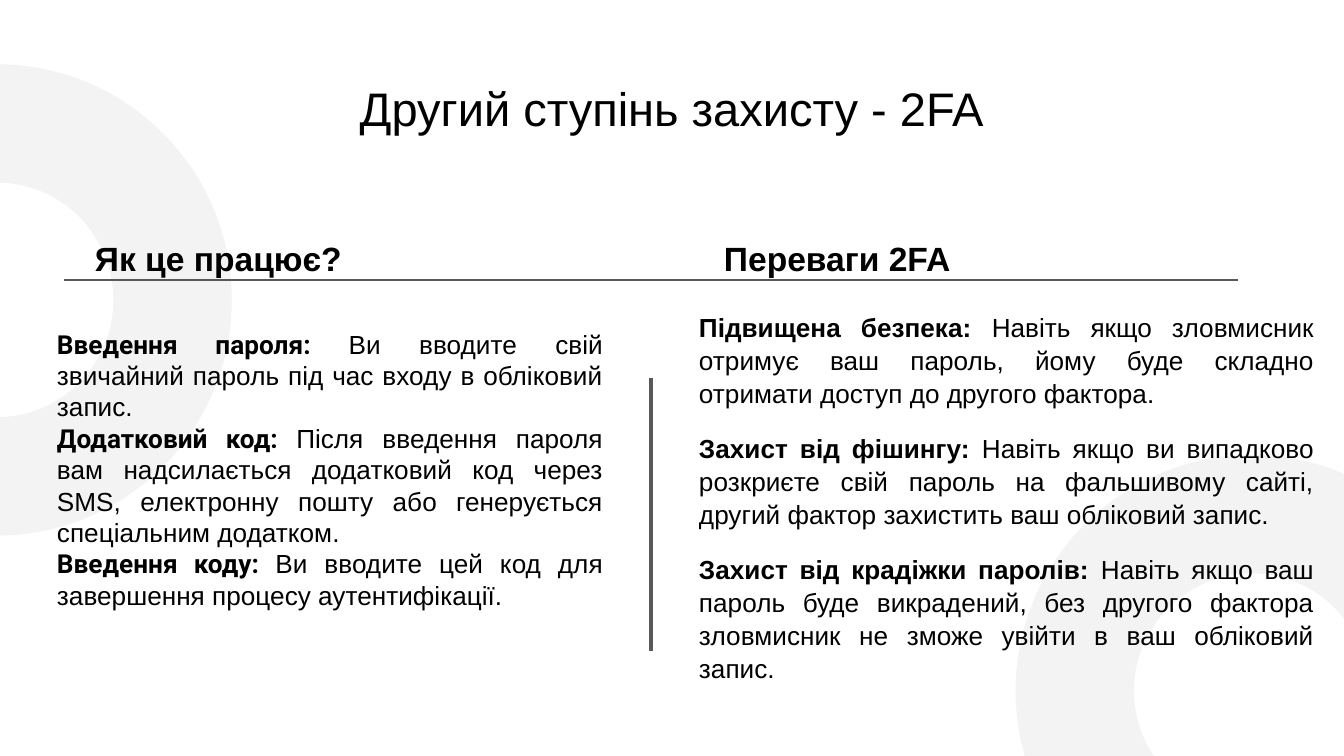
import pptx
import pptx.util
import pptx.dml.color
import pptx.enum.shapes
import pptx.enum.text
import pptx.oxml

PX = 914400 / 134.4
INSET = 13
ALIGN = pptx.enum.text.PP_ALIGN
ANCHOR = pptx.enum.text.MSO_ANCHOR

STEPS = [
    ("Введення пароля: ", "Ви вводите свій звичайний пароль під час входу в обліковий запис."),
    ("Додатковий код: ", "Після введення пароля вам надсилається додатковий код через SMS, "
     "електронну пошту або генерується спеціальним додатком."),
    ("Введення коду: ", "Ви вводите цей код для завершення процесу аутентифікації."),
]
BENEFITS = [
    ("Підвищена безпека: ", "Навіть якщо зловмисник отримує ваш пароль, йому буде складно "
     "отримати доступ до другого фактора."),
    ("Захист від фішингу: ", "Навіть якщо ви випадково розкриєте свій пароль на фальшивому "
     "сайті, другий фактор захистить ваш обліковий запис."),
    ("Захист від крадіжки паролів:", " Навіть якщо ваш пароль буде викрадений, без другого "
     "фактора зловмисник не зможе увійти в ваш обліковий запис."),
]


def px(length):
    return pptx.util.Emu(round(length * PX))


def color(value):
    return pptx.dml.color.RGBColor.from_string(value)


def add_span(para, text, size, bold=False, font="Arial"):
    span = para.add_run()
    span.text = text
    span.font.size = pptx.util.Pt(size)
    span.font.bold = bold
    span.font.name = font
    span.font.color.rgb = color("000000")


def prepare_frame(shape, anchor):
    frame = shape.text_frame
    frame.word_wrap = True
    frame.auto_size = pptx.enum.text.MSO_AUTO_SIZE.NONE
    frame.vertical_anchor = anchor
    frame.margin_left = frame.margin_right = px(INSET)
    frame.margin_top = frame.margin_bottom = px(INSET)
    return frame


def add_text_box(page, box, anchor):
    return prepare_frame(page.shapes.add_textbox(*map(px, box)), anchor)


def add_ring(page, box, rotation):
    ring = page.shapes.add_shape(
        pptx.enum.shapes.MSO_SHAPE.BLOCK_ARC, *map(px, box))
    ring.adjustments[0] = 108
    ring.adjustments[1] = 0
    ring.adjustments[2] = 0.25
    ring.rotation = rotation
    ring.shadow.inherit = False
    ring.fill.solid()
    ring.fill.fore_color.rgb = color("F3F3F3")
    ring.line.color.rgb = color("F3F3F3")
    ring.line.width = pptx.util.Pt(0.75)


def add_title(page, box, text):
    title = page.shapes.title
    title.left, title.top, title.width, title.height = map(px, box)
    para = prepare_frame(title, ANCHOR.MIDDLE).paragraphs[0]
    para.alignment = ALIGN.CENTER
    add_span(para, text, 25.2)


def add_heading(page, box, text):
    para = add_text_box(page, box, ANCHOR.MIDDLE).paragraphs[0]
    para.line_spacing = 1.15
    add_span(para, text, 18, bold=True)


def add_points(page, box, points, label_font, line_spacing, gap):
    frame = add_text_box(page, box, ANCHOR.TOP)
    for index, (label, detail) in enumerate(points):
        para = frame.add_paragraph() if index else frame.paragraphs[0]
        para.alignment = ALIGN.JUSTIFY
        para.line_spacing = line_spacing
        para.space_before = pptx.util.Pt(gap if index else 0)
        add_span(para, label, 14, bold=True, font=label_font)
        add_span(para, detail, 14)


def add_rule(page, start, end, width):
    rule = page.shapes.add_connector(
        pptx.enum.shapes.MSO_CONNECTOR.STRAIGHT, *map(px, start + end))
    rule.line.color.rgb = color("595959")
    rule.line.width = pptx.util.Pt(width)
    properties = rule._element.spPr
    properties.append(pptx.oxml.parse_xml(
        '<a:effectLst xmlns:a="http://schemas.openxmlformats.org/drawingml/2006/main"/>'))


def build_page(deck):
    page = deck.slides.add_slide(deck.slide_layouts[5])
    # Background rings
    add_ring(page, (-238, 66, 470, 468), 90)
    add_ring(page, (1016, 456, 470, 468), 325.4)
    # Title
    add_title(page, (46, 66, 1252, 84), "Другий ступінь захисту - 2FA")
    # Left column: how it works
    add_heading(page, (82, 214, 485, 83), "Як це працює?")
    add_points(page, (44, 315, 572, 355), STEPS, "Roboto", 1.0, 0)
    # Right column: benefits
    add_heading(page, (711, 214, 485, 83), "Переваги 2FA")
    add_points(page, (686, 297, 641, 426), BENEFITS, "Arial", 1.05, 12)
    # Dividing rules
    add_rule(page, (64, 280), (1238, 280), 0.75)
    add_rule(page, (651, 651), (651, 378), 2.25)


def main():
    deck = pptx.Presentation()
    deck.slide_width, deck.slide_height = px(1344), px(756)
    build_page(deck)
    deck.save("out.pptx")


if __name__ == "__main__":
    main()
